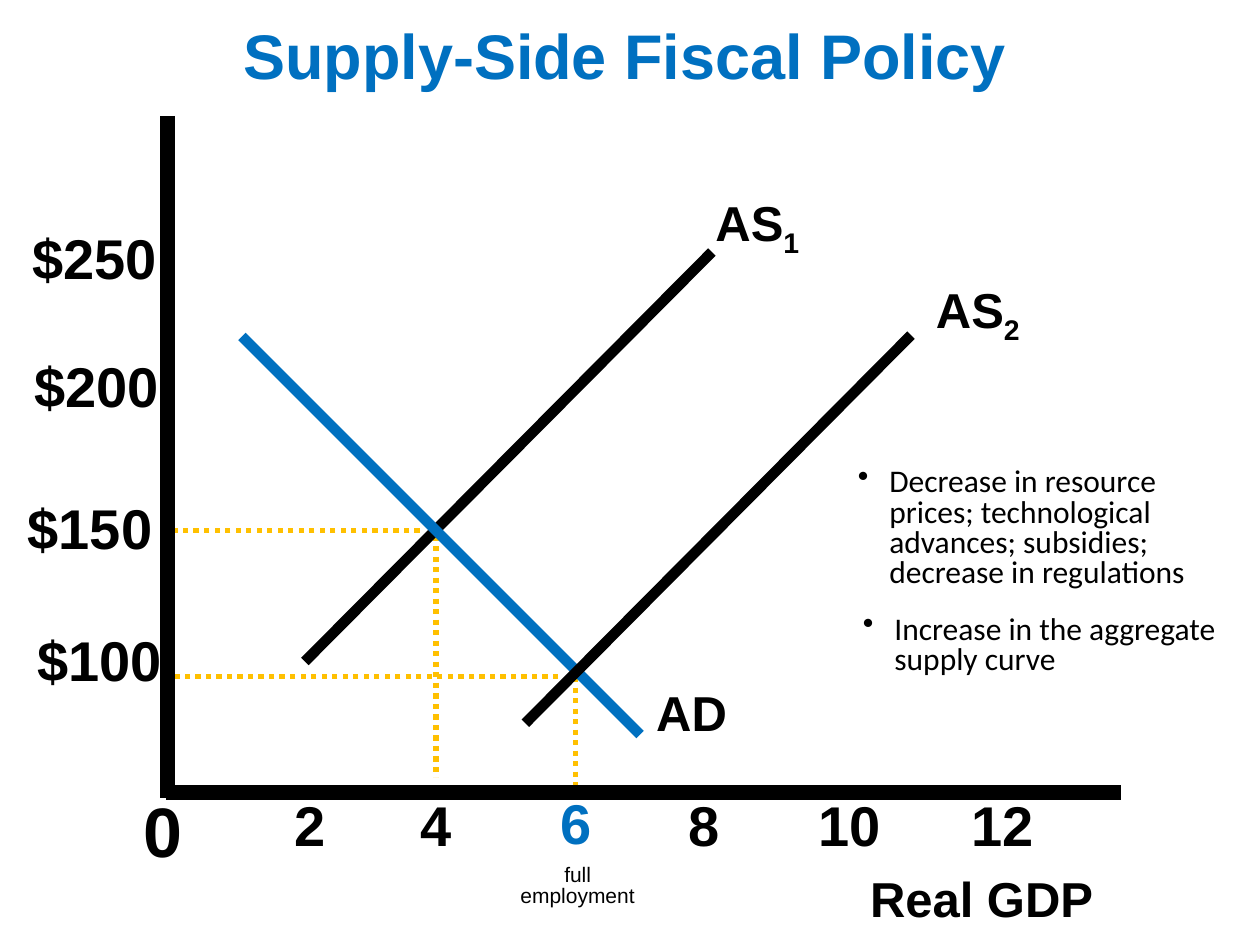
from dataclasses import dataclass

from lxml.etree import SubElement
from pptx import Presentation
from pptx.dml.color import RGBColor
from pptx.enum.dml import MSO_LINE
from pptx.enum.shapes import MSO_CONNECTOR, MSO_SHAPE
from pptx.enum.text import MSO_ANCHOR, MSO_AUTO_SIZE, PP_ALIGN
from pptx.oxml.ns import qn
from pptx.util import Inches, Pt


@dataclass(frozen=True)
class Theme:
    ink: str = "000000"
    accent: str = "0070C0"
    guide: str = "FFC000"
    paper: str = "FFFFFF"
    heading_font: str = "Arial"
    body_font: str = "Calibri"
    title: int = 36
    origin: int = 40
    tick: int = 32
    label: int = 28
    note: int = 18
    caption: int = 12
    axis_width: int = 9
    curve_width: int = 6
    guide_width: int = 3


THEME = Theme()
TITLE = ("Supply-Side Fiscal Policy", (1.42, 0.08, 7.08, 0.65))

GUIDES = [
    ((4.57, 5.29), (4.57, 6.29)),
    ((3.46, 4.25), (3.46, 6.17)),
    ((3.33, 4.21), (1.25, 4.21)),
    ((4.43, 5.37), (1.33, 5.37)),
]
CURVES = [
    ((5.65, 2), (2.42, 5.25), THEME.ink),
    ((1.92, 2.67), (5.08, 5.83), THEME.accent),
    ((7.23, 2.66), (4.17, 5.74), THEME.ink),
]
AXES = [((1.33, 0.92), (1.33, 6.33)), ((1.32, 6.29), (8.9, 6.29))]

TICK_HEIGHT = 0.53
PRICE_TICKS = [
    ("$250", -0.02, 1.83, 1.54),
    ("$200", 0.14, 2.84, 1.25),
    ("$150", 0.08, 3.97, 1.27),
    ("$100", 0.15, 5.02, 1.28),
]
OUTPUT_TICKS = [
    ("2", 2.17, 6.33, 0.58),
    ("4", 3.17, 6.33, 0.58),
    ("6", 4.28, 6.31, 0.58),
    ("8", 5.3, 6.33, 0.58),
    ("10", 6.33, 6.33, 0.83),
    ("12", 7.42, 6.33, 1.08),
]
FULL_EMPLOYMENT_OUTPUT = "6"
ORIGIN = ("0", (1, 6.33, 0.58, 0.63))
OUTPUT_TITLE = ("Real GDP", (6.58, 6.84, 2.42, 0.52))
EMPLOYMENT_CAPTION = ("full employment", (4, 6.83, 1.17, 0.42))
CURVE_LABELS = [
    ("AS", "1", (5.58, 1.48, 1.23, 0.53)),
    ("AS", "2", (7.33, 2.17, 1.08, 0.53)),
    ("AD", "", (5.11, 5.37, 1, 0.53)),
]
NOTES = [
    ("Decrease in resource prices; technological advances; subsidies; decrease in regulations",
     (6.71, 3.67, 3.12, 1.07)),
    ("Increase in the aggregate supply curve", (6.75, 4.84, 3.08, 0.59)),
]


def write(shape, text, size, color=THEME.ink, font=THEME.heading_font, bold=True,
          align=PP_ALIGN.CENTER, spacing=None):
    """Fill a shape with one styled paragraph and return the paragraph."""
    frame = shape.text_frame
    frame.word_wrap = True
    frame.auto_size = MSO_AUTO_SIZE.SHAPE_TO_FIT_TEXT
    frame.vertical_anchor = MSO_ANCHOR.TOP
    paragraph = frame.paragraphs[0]
    paragraph.alignment = align
    if spacing:
        paragraph.line_spacing = spacing
    paragraph.font.name = font
    paragraph.font.size = Pt(size)
    paragraph.font.bold = bold
    paragraph.font.color.rgb = RGBColor.from_string(color)
    paragraph.add_run().text = text
    return paragraph


def add_text(slide, text, box, size, **style):
    """Add a text box holding one paragraph and return the paragraph."""
    return write(slide.shapes.add_textbox(*map(Inches, box)), text, size, **style)


def add_line(slide, start, end, color, width, dash=None):
    """Draw a straight line without a shadow."""
    line = slide.shapes.add_connector(MSO_CONNECTOR.STRAIGHT, *map(Inches, start + end))
    line.line.color.rgb = RGBColor.from_string(color)
    line.line.width = Pt(width)
    if dash:
        line.line.dash_style = dash
    SubElement(line.element.spPr, qn("a:effectLst"))


def add_title(slide):
    """Place the heading on its plain panel."""
    text, box = TITLE
    panel = slide.shapes.add_shape(MSO_SHAPE.RECTANGLE, *map(Inches, box))
    panel.shadow.inherit = False
    panel.fill.solid()
    panel.fill.fore_color.rgb = RGBColor.from_string(THEME.paper)
    panel.line.fill.background()
    write(panel, text, THEME.title, color=THEME.accent)


def add_graph(slide):
    """Draw the guides, the curves and the axes."""
    for start, end in GUIDES:
        add_line(slide, start, end, THEME.guide, THEME.guide_width, MSO_LINE.ROUND_DOT)
    for start, end, color in CURVES:
        add_line(slide, start, end, color, THEME.curve_width)
    for start, end in AXES:
        add_line(slide, start, end, THEME.ink, THEME.axis_width)


def add_labels(slide):
    """Label the axes and the curves."""
    for text, left, top, width in PRICE_TICKS + OUTPUT_TICKS:
        color = THEME.accent if text == FULL_EMPLOYMENT_OUTPUT else THEME.ink
        add_text(slide, text, (left, top, width, TICK_HEIGHT), THEME.tick,
                 color=color, spacing=0.8)
    add_text(slide, *ORIGIN, THEME.origin, spacing=0.8)
    add_text(slide, *OUTPUT_TITLE, THEME.label)
    add_text(slide, *EMPLOYMENT_CAPTION, THEME.caption, bold=False, spacing=0.8)
    for name, index, box in CURVE_LABELS:
        label = add_text(slide, name, box, THEME.label, align=PP_ALIGN.LEFT)
        if index:
            subscript = label.add_run()
            subscript.text = index
            subscript.font._element.set("baseline", "-25000")


def add_notes(slide):
    """Add the bulleted remarks beside the graph."""
    for text, box in NOTES:
        note = add_text(slide, text, box, THEME.note, font=THEME.body_font, bold=False,
                        align=PP_ALIGN.LEFT, spacing=0.8)
        properties = note._p.get_or_add_pPr()
        properties.set("marL", str(Inches(0.25)))
        properties.set("indent", str(-Inches(0.25)))
        bullet = properties.makeelement(qn("a:buChar"), {"char": "•"})
        properties.find(qn("a:defRPr")).addprevious(bullet)


def main():
    """Build the supply-side fiscal policy slide."""
    presentation = Presentation()
    presentation.slide_width = Inches(10)
    presentation.slide_height = Inches(7.5)
    slide = presentation.slides.add_slide(presentation.slide_layouts[6])
    add_title(slide)
    add_graph(slide)
    add_labels(slide)
    add_notes(slide)
    presentation.save("out.pptx")


if __name__ == "__main__":
    main()
